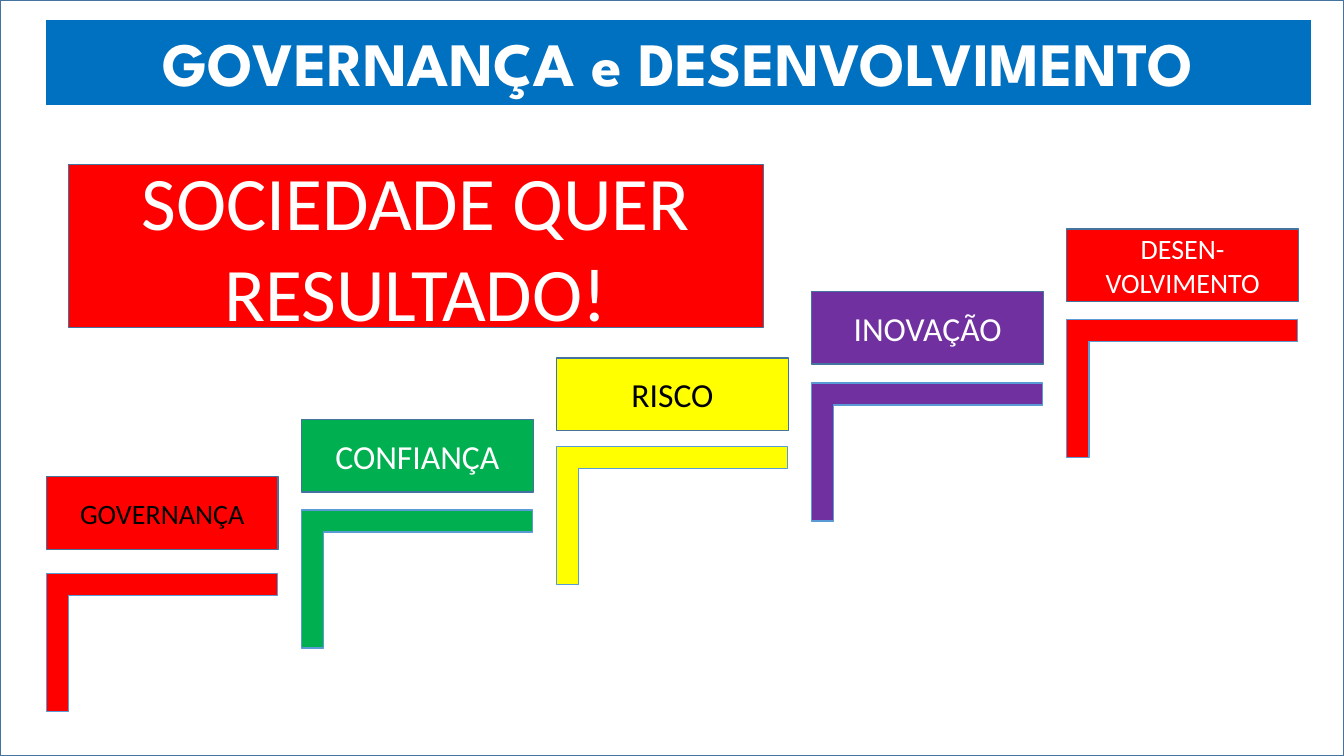
from dataclasses import dataclass

from pptx import Presentation
from pptx.dml.color import RGBColor as Color
from pptx.enum.shapes import MSO_SHAPE as Shape
from pptx.enum.text import MSO_ANCHOR as Anchor, MSO_AUTO_SIZE as AutoSize, PP_ALIGN as Align
from pptx.util import Inches, Pt


@dataclass(frozen=True)
class Theme:
    white: str = "FFFFFF"
    black: str = "000000"
    red: str = "FF0000"
    green: str = "00B050"
    yellow: str = "FFFF00"
    purple: str = "7030A0"
    blue: str = "0070C0"
    box_line: str = "43739E"
    stair_line: str = "5B9BD5"
    title_font: str = "League Spartan"
    body_font: str = "Calibri"
    title_size: int = 44
    banner_size: int = 54
    label_size: int = 24
    small_size: int = 20


theme = Theme()

# Staircase grid, in inches
LEFT, COLUMN, RISE = 0.46, 2.53, 0.63
STAIR_WIDTH, STAIR_HEIGHT, FIRST_STAIR_TOP = 2.29, 1.37, 5.69
LABEL_WIDTH, LABEL_HEIGHT = 2.3, 0.72

deck = Presentation()
deck.slide_width, deck.slide_height = Inches(13.33), Inches(7.5)
page = deck.slides.add_slide(deck.slide_layouts.get_by_name("Title Only"))


def add_box(kind, area, fill, line):
    box = page.shapes.add_shape(kind, *map(Inches, area))
    box.shadow.inherit = False
    box.fill.solid()
    box.fill.fore_color.rgb = Color.from_string(fill)
    box.line.color.rgb = Color.from_string(line)
    box.line.width = Pt(1)
    return box


def write(box, text, font, size, color, bold=False, anchor=Anchor.MIDDLE):
    frame_format = {"word_wrap": True, "auto_size": AutoSize.NONE, "vertical_anchor": anchor}
    for name, value in frame_format.items():
        setattr(box.text_frame, name, value)
    para = box.text_frame.paragraphs[0]
    para.alignment = Align.CENTER
    span = para.add_run()
    span.text = text
    for name, value in {"name": font, "size": Pt(size), "bold": bold}.items():
        setattr(span.font, name, value)
    span.font.color.rgb = Color.from_string(color)


# White page frame, behind the title
frame = add_box(Shape.RECTANGLE, (0, 0, 13.33, 7.5), theme.white, theme.box_line)
page.shapes._spTree.insert(2, frame._element)

# Title bar
title = page.shapes.title
title_area = {"left": LEFT, "top": 0.2, "width": 12.54, "height": 0.84}
for side, length in title_area.items():
    setattr(title, side, Inches(length))
title.fill.solid()
title.fill.fore_color.rgb = Color.from_string(theme.blue)
title.line.color.rgb = Color.from_string(theme.blue)
title.line.width = Pt(0.75)
write(title, "GOVERNANÇA e DESENVOLVIMENTO", theme.title_font, theme.title_size,
      theme.white, bold=True, anchor=Anchor.TOP)

# Steps: label, label top, fill, text colour, text size
steps = [
    ("GOVERNANÇA", 4.73, theme.red, theme.black, theme.small_size),
    ("CONFIANÇA", 4.16, theme.green, theme.white, theme.label_size),
    ("RISCO", 3.55, theme.yellow, theme.black, theme.label_size),
    ("INOVAÇÃO", 2.89, theme.purple, theme.white, theme.label_size),
    ("DESEN-VOLVIMENTO", 2.27, theme.red, theme.white, theme.small_size),
]
for index, (label, label_top, fill, text_color, size) in enumerate(steps):
    left = LEFT + index * COLUMN

    # Stair: an L turned a quarter about its centre
    turn = (STAIR_WIDTH - STAIR_HEIGHT) / 2
    stair_top = FIRST_STAIR_TOP - index * RISE
    stair = add_box(Shape.CORNER, (left + turn, stair_top - turn, STAIR_HEIGHT, STAIR_WIDTH),
                    fill, theme.stair_line)
    stair.rotation = 90
    for arm in range(2):
        stair.adjustments[arm] = 0.16

    # Label above the stair
    box = add_box(Shape.RECTANGLE, (left, label_top, LABEL_WIDTH, LABEL_HEIGHT),
                  fill, theme.box_line)
    write(box, label, theme.body_font, size, text_color)

# Banner
banner = add_box(Shape.RECTANGLE, (0.68, 1.63, 6.89, 1.62), theme.red, theme.box_line)
write(banner, "SOCIEDADE QUER RESULTADO!", theme.body_font, theme.banner_size, theme.white)

deck.save("out.pptx")
